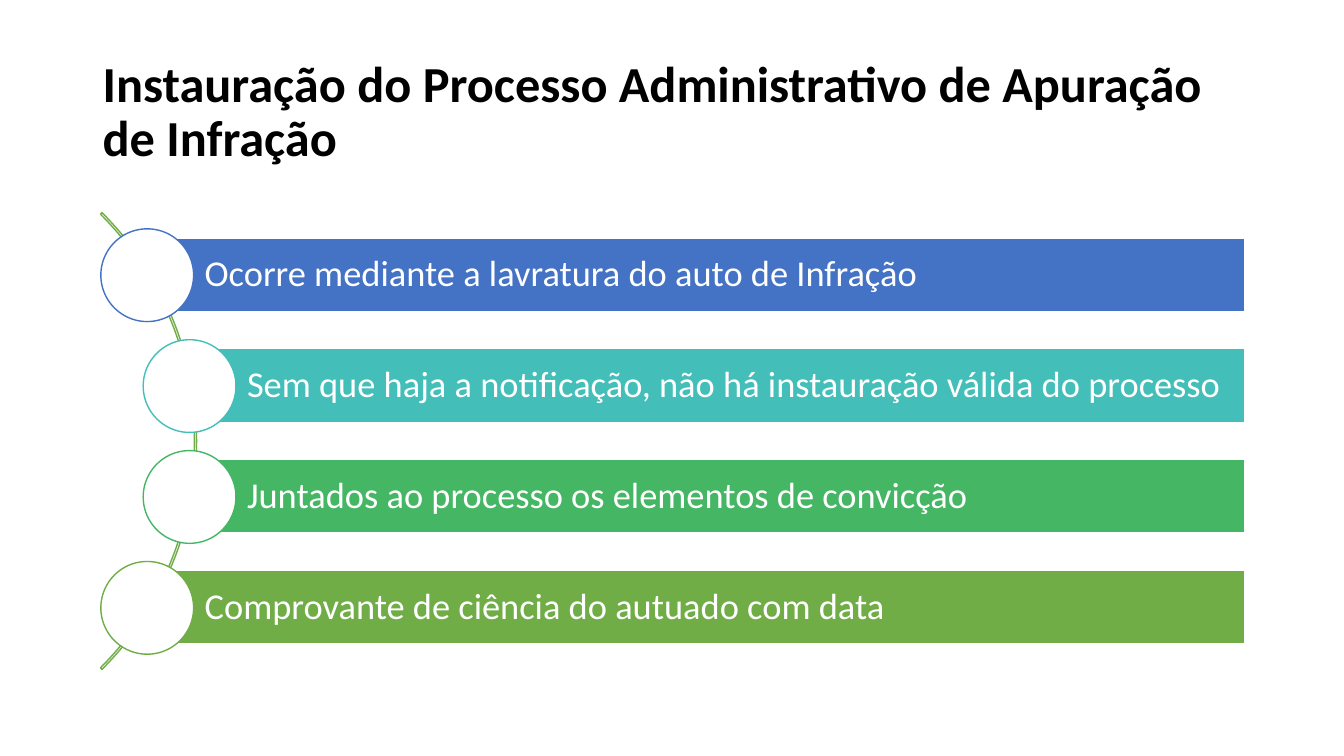
from pptx import Presentation
from pptx.dml.color import RGBColor
from pptx.enum.shapes import MSO_SHAPE
from pptx.enum.text import MSO_ANCHOR, PP_ALIGN
from pptx.util import Pt

PX = 9144  # EMU per px, 100 px to the inch
RECT, OVAL, ARC = MSO_SHAPE.RECTANGLE, MSO_SHAPE.OVAL, MSO_SHAPE.BLOCK_ARC
MIDDLE, LEFT = MSO_ANCHOR.MIDDLE, PP_ALIGN.LEFT
FONT = "Calibri"
COLORS = {
    "black": "000000",
    "white": "FFFFFF",
    "blue": "4472C4",
    "teal": "43BEB9",
    "emerald": "45B664",
    "green": "70AD47",
}
TITLE = "Instauração do Processo Administrativo de Apuração de Infração"
# Text, colour, shift of the step along the arc
STEPS = [
    ("Ocorre mediante a lavratura do auto de Infração", "blue", 0),
    ("Sem que haja a notificação, não há instauração válida do processo", "teal", 42),
    ("Juntados ao processo os elementos de convicção", "emerald", 42),
    ("Comprovante de ciência do autuado com data", "green", 0),
]


def rgb(name):
    return RGBColor.from_string(COLORS[name])


def emu(*lengths):
    return [n * PX for n in lengths]


def add_shape(slide, kind, box, fill, line):
    sp = slide.shapes.add_shape(kind, *emu(*box))
    sp.shadow.inherit = False
    if fill:
        sp.fill.solid()
        sp.fill.fore_color.rgb = rgb(fill)
    else:
        sp.fill.background()
    sp.line.color.rgb = rgb(line)
    sp.line.width = Pt(1)
    return sp


def write(sp, text, size, color, margins, bold=False):
    tf = sp.text_frame
    tf.word_wrap = True
    tf.vertical_anchor = MIDDLE
    tf.margin_left, tf.margin_top, tf.margin_right, tf.margin_bottom = emu(*margins)
    tf.text = text
    p = tf.paragraphs[0]
    p.alignment = LEFT
    p.line_spacing = 0.9
    font = p.runs[0].font
    font.name, font.size, font.bold = FONT, Pt(size), bold
    font.color.rgb = rgb(color)


def add_title(slide, box):
    sp = slide.shapes.add_textbox(*emu(*box))
    write(sp, TITLE, 36, "black", (10, 5, 10, 5), bold=True)


def add_step_list(slide, box):
    left, top, width, height = box
    bar_h, circle, pitch = 73, 92, 110

    # Thin arc behind the steps, centred on the list
    arc = 641
    arc_box = (left + 95 - arc, top + (height - arc) // 2, arc, arc)
    sp = add_shape(slide, ARC, arc_box, None, "green")
    for i, value in enumerate((189, 27, 0.0034)):
        sp.adjustments[i] = value

    # Bars, each with a circle centred on its left end
    for i, (text, color, shift) in enumerate(STEPS):
        x = left + shift
        y = top + i * pitch
        bar_x = x + circle // 2 - 1
        bar_y = y + (circle - bar_h) // 2
        bar = add_shape(slide, RECT, (bar_x, bar_y, left + width - bar_x, bar_h), color, "white")
        write(bar, text, 26, "white", (58, 7, 7, 7))
        add_shape(slide, OVAL, (x, y, circle, circle), "white", color)


def main():
    prs = Presentation()
    prs.slide_width, prs.slide_height = emu(1333, 750)
    slide = prs.slides.add_slide(prs.slide_layouts[6])
    add_title(slide, (92, 40, 1150, 145))
    add_step_list(slide, (100, 227, 1135, 422))
    prs.save("out.pptx")


if __name__ == "__main__":
    main()
